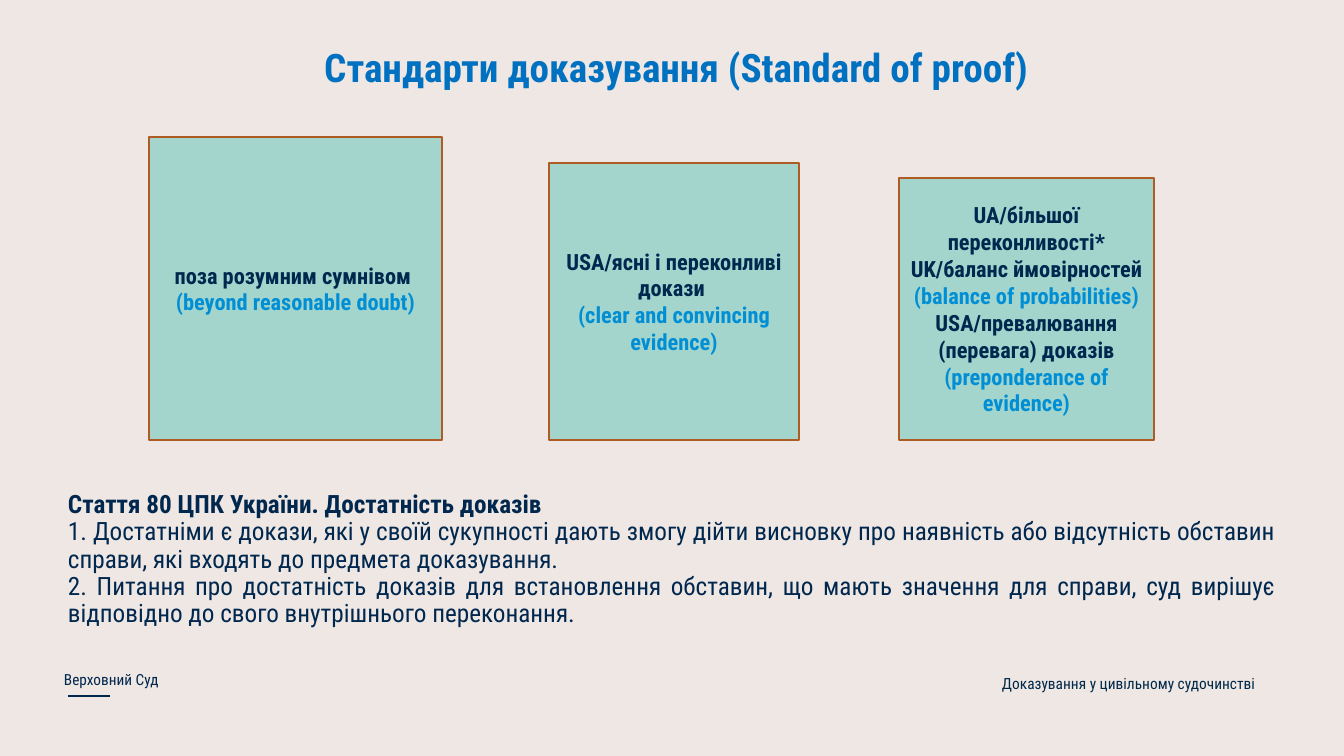
import pptx
import pptx.dml.color
import pptx.enum.shapes
import pptx.enum.text
import pptx.oxml.ns
import pptx.util
from lxml import etree

PX = 914400 / 100.8
FONT = "Roboto Condensed"
NAVY, SKY, BLUE = "00274E", "008FD5", "0070C0"
ALIGN = pptx.enum.text.PP_ALIGN
ANCHOR = pptx.enum.text.MSO_ANCHOR


def px(length):
    return pptx.util.Emu(round(length * PX))


def color(hex_string):
    return pptx.dml.color.RGBColor.from_string(hex_string)


def write_text(shape, paragraphs, size, aligns=(ALIGN.LEFT,), anchor=ANCHOR.MIDDLE,
               spacing=1.0, insets=(10, 5)):
    """Each paragraph is a list of (text, hex colour, bold); the last align repeats."""
    frame = shape.text_frame
    frame.word_wrap = True
    frame.auto_size = pptx.enum.text.MSO_AUTO_SIZE.NONE
    frame.vertical_anchor = anchor
    frame.margin_left = frame.margin_right = px(insets[0])
    frame.margin_top = frame.margin_bottom = px(insets[1])
    for index, runs in enumerate(paragraphs):
        paragraph = frame.paragraphs[0] if index == 0 else frame.add_paragraph()
        paragraph.alignment = aligns[min(index, len(aligns) - 1)]
        paragraph.line_spacing = spacing
        for text, hex_string, bold in runs:
            run = paragraph.add_run()
            run.text = text
            run.font.name = FONT
            run.font.size = pptx.util.Pt(size)
            run.font.bold = bold
            run.font.color.rgb = color(hex_string)


def add_text(slide, box, paragraphs, size, **text_format):
    shape = slide.shapes.add_textbox(*map(px, box))
    write_text(shape, paragraphs, size, **text_format)


def add_title(slide, box, text):
    title = slide.shapes.title
    title.left, title.top, title.width, title.height = map(px, box)
    write_text(title, [[(text, BLUE, True)]], 28, aligns=(ALIGN.CENTER,), spacing=0.9)


def add_standard(slide, box, paragraphs):
    """Translucent square naming one standard of proof."""
    shape = slide.shapes.add_shape(pptx.enum.shapes.MSO_SHAPE.RECTANGLE, *map(px, box))
    shape.shadow.inherit = False
    shape.fill.solid()
    shape.fill.fore_color.rgb = color("32BCAD")
    fill_color = shape.fill._xPr.find(".//" + pptx.oxml.ns.qn("a:srgbClr"))
    etree.SubElement(fill_color, pptx.oxml.ns.qn("a:alpha"), val="40000")
    shape.line.color.rgb = color("AF5C24")
    shape.line.width = pptx.util.Pt(1)
    write_text(shape, paragraphs, 16, aligns=(ALIGN.CENTER,))


def add_standards(slide, box):
    """Three squares of falling height standing on the bottom of the box."""
    left, top, width, height = box
    standards = [
        (0, 293, 303, [
            [("поза розумним сумнівом ", NAVY, True)],
            [("(beyond reasonable doubt)", SKY, True)]]),
        (400, 250, 277, [
            [("USA/ясні і переконливі докази ", NAVY, True)],
            [("(clear and convincing evidence)", SKY, True)]]),
        (750, 255, 262, [
            [("UA/більшої переконливості*", NAVY, True)],
            [("UK/баланс ймовірностей ", NAVY, True),
             ("(balance of probabilities)", SKY, True)],
            [("USA/превалювання (перевага) доказів ", NAVY, True),
             ("(preponderance of evidence)", SKY, True)]]),
    ]
    for offset, square_width, square_height, paragraphs in standards:
        square = (left + offset, top + height - square_height, square_width, square_height)
        add_standard(slide, square, paragraphs)


def add_article(slide, box):
    paragraphs = [
        [("Стаття 80 ЦПК України.\u00a0Достатність доказів".replace("\u00a0", " "), NAVY, True)],
        [("1. Достатніми є докази, які у своїй сукупності дають змогу дійти висновку про "
          "наявність або відсутність обставин справи, які входять до предмета доказування.",
          NAVY, False)],
        [("2. Питання про достатність доказів для встановлення обставин, що мають значення "
          "для справи, суд вирішує відповідно до свого внутрішнього переконання.",
          NAVY, False)],
    ]
    add_text(slide, box, paragraphs, 18, aligns=(ALIGN.LEFT, ALIGN.JUSTIFY), spacing=0.9)


def add_footer(slide, box):
    left, top, width, height = box
    add_text(slide, (left, top, 145, 40), [[("Верховний Суд", NAVY, False)]], 10.9,
             spacing=1.14, insets=(9, 5))
    add_text(slide, (left + width - 298, top + 14, 298, 26),
             [[("Доказування у цивільному судочинстві", "002949", False)]], 11,
             anchor=ANCHOR.TOP, spacing=0.9, insets=(7, 4))
    rule_y = px(top + height)
    rule = slide.shapes.add_connector(pptx.enum.shapes.MSO_CONNECTOR.STRAIGHT,
                                      px(left + 13), rule_y, px(left + 55), rule_y)
    rule.line.color.rgb = color(NAVY)
    rule.line.width = pptx.util.Pt(1.12)
    etree.SubElement(rule._element.spPr, pptx.oxml.ns.qn("a:effectLst"))


def main():
    presentation = pptx.Presentation()
    presentation.slide_width, presentation.slide_height = px(1344), px(756)
    slide = presentation.slides.add_slide(presentation.slide_layouts[5])
    slide.background.fill.solid()
    slide.background.fill.fore_color.rgb = color("EFE7E3")
    add_title(slide, (259, 40, 834, 59), "Стандарти доказування (Standard of proof)")
    add_standards(slide, (149, 137, 1005, 303))
    add_article(slide, (58, 478, 1228, 164))
    add_footer(slide, (55, 658, 1238, 38))
    presentation.save("out.pptx")


if __name__ == "__main__":
    main()
